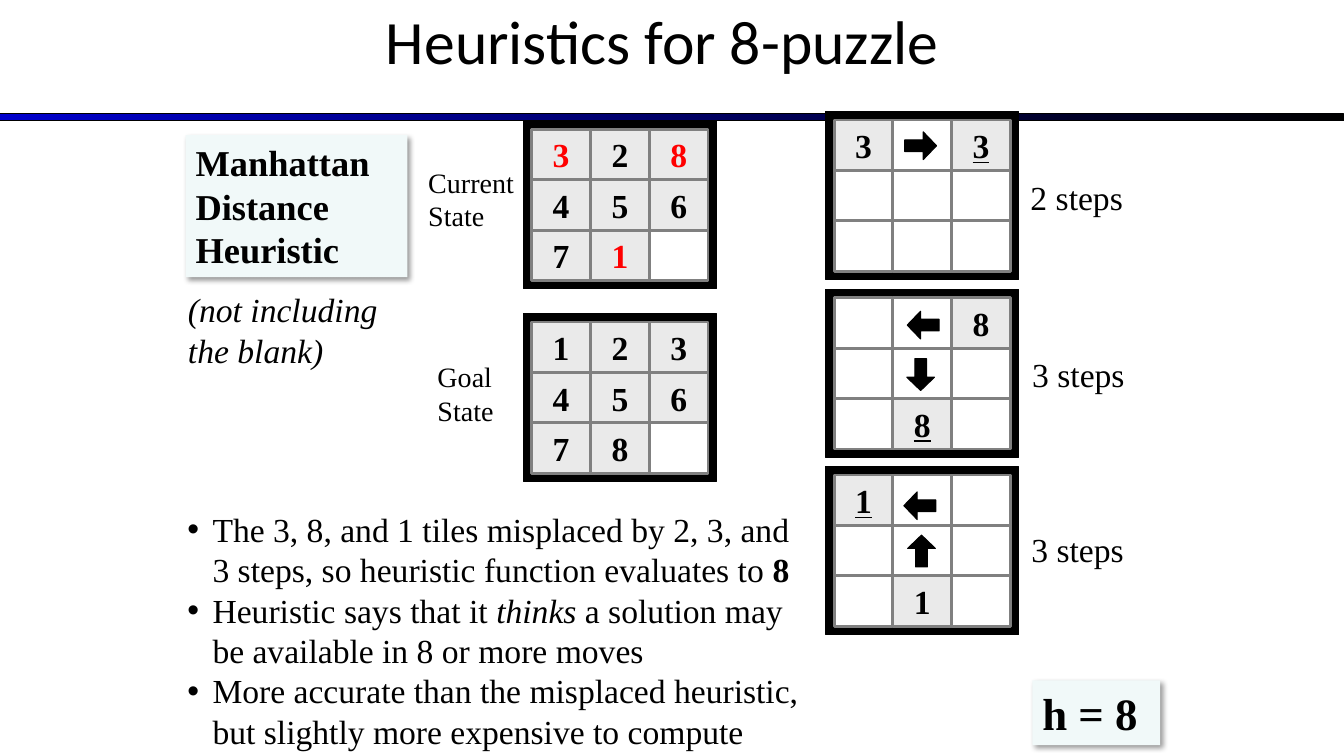
from dataclasses import dataclass

import lxml.etree
import pptx
import pptx.dml.color
import pptx.enum.shapes
import pptx.enum.text
import pptx.oxml
import pptx.oxml.ns
import pptx.util

WIDTH, HEIGHT = pptx.util.Inches(13.33), pptx.util.Inches(7.5)
COLUMNS, ROWS = 160, 90
CELL_COLUMNS, CELL_ROWS, FRAME = 7, 6, 1
SERIF = "Times New Roman"
BLACK, RED, WHITE = "000000", "FF0000", "FFFFFF"
TILE, GRID_LINE, PANEL = "EAEAEA", "808080", "F1F9F9"
RECTANGLE = pptx.enum.shapes.MSO_SHAPE.RECTANGLE
RIGHT_ARROW = pptx.enum.shapes.MSO_SHAPE.RIGHT_ARROW
RIGHT, DOWN, LEFT, UP = 0, 90, 180, 270


@dataclass
class Area:
    """A rectangle measured in columns and rows of the slide grid."""
    column: float
    row: float
    columns: float
    rows: float

    def lengths(self) -> tuple[int, int, int, int]:
        across, down = WIDTH / COLUMNS, HEIGHT / ROWS
        return (round(self.column * across), round(self.row * down),
                round(self.columns * across), round(self.rows * down))


@dataclass
class Run:
    text: str
    bold: bool = False
    italic: bool = False
    underline: bool = False
    color: str = BLACK


@dataclass
class Board:
    """Three strings of tiles; a dot is an empty cell."""
    column: float
    row: float
    tiles: tuple[str, str, str]
    red: str = ""
    goal: tuple[int, int] | None = None


@dataclass
class Arrow:
    """An arrow given by its centre on the slide grid."""
    column: float
    row: float
    rotation: int


@dataclass
class Label:
    area: Area
    paragraphs: list[list[Run]]
    size: int
    wrap: bool = True
    panel: bool = False


BOARDS = [
    Board(62.3, 14.4, ("328", "456", "71."), red="381"),
    Board(62.3, 37.35, ("123", "456", "78.")),
    Board(98.3, 13.3, ("3.3", "...", "..."), goal=(0, 2)),
    Board(98.3, 34.45, ("..8", "...", ".8."), goal=(2, 1)),
    Board(98.3, 55.55, ("1..", "...", ".1."), goal=(0, 0)),
]
ARROWS = [
    Arrow(109.6, 17.35, RIGHT),
    Arrow(109.7, 65.6, UP),
    Arrow(109.5, 60.2, LEFT),
    Arrow(109.6, 44.6, DOWN),
    Arrow(109.9, 38.7, LEFT),
]
LABELS = [
    Label(Area(22.1, 16.1, 26.4, 16.9),
          [[Run("Manhattan Distance", bold=True)], [Run("Heuristic", bold=True)]],
          26, panel=True),
    Label(Area(50.9, 42.25, 13.9, 9.25), [[Run("Goal State")]], 20),
    Label(Area(49.8, 19.1, 15.6, 9.25), [[Run("Current State")]], 20),
    Label(Area(121.5, 20.5, 13.6, 6), [[Run("2 steps")]], 24, wrap=False),
    Label(Area(121.7, 41.6, 13.6, 6), [[Run("3 steps")]], 24, wrap=False),
    Label(Area(121.6, 62.4, 13.6, 6), [[Run("3 steps")]], 24, wrap=False),
    Label(Area(122.9, 81, 15.2, 7.7), [[Run("h = 8", bold=True)]], 32,
          wrap=False, panel=True),
    Label(Area(21.2, 33.85, 28.1, 10.9),
          [[Run("(not including the blank)", italic=True)]], 24),
]
BULLETS = [
    [Run("The 3, 8, and 1 tiles misplaced by 2, 3, and 3 steps, "
         "so heuristic function evaluates to "), Run("8", bold=True)],
    [Run("Heuristic says that it "), Run("thinks", italic=True),
     Run(" a solution may be available in 8 or more moves")],
    [Run("More accurate than the misplaced heuristic, "
         "but slightly more expensive to compute")],
]


def rgb(color: str) -> pptx.dml.color.RGBColor:
    return pptx.dml.color.RGBColor.from_string(color)


def place(shape, area: Area) -> None:
    shape.left, shape.top, shape.width, shape.height = area.lengths()


def write(frame, paragraphs: list[list[Run]], size: int, font: str = SERIF,
          align=pptx.enum.text.PP_ALIGN.LEFT, wrap: bool = True,
          bulleted: bool = False) -> None:
    frame.auto_size = pptx.enum.text.MSO_AUTO_SIZE.NONE
    frame.word_wrap = wrap
    for index, runs in enumerate(paragraphs):
        paragraph = frame.add_paragraph() if index else frame.paragraphs[0]
        if bulleted:
            add_bullet(paragraph)
        paragraph.alignment = align
        paragraph.space_before = pptx.util.Pt(0)
        for item in runs:
            run = paragraph.add_run()
            run.text = item.text
            run.font.name, run.font.size = font, pptx.util.Pt(size)
            run.font.bold, run.font.italic = item.bold, item.italic
            run.font.underline = item.underline
            run.font.color.rgb = rgb(item.color)


def add_bullet(paragraph) -> None:
    properties = paragraph._p.get_or_add_pPr()
    indent = pptx.util.Inches(0.25)
    properties.set("marL", str(indent))
    properties.set("indent", str(-indent))
    bullet = lxml.etree.SubElement(properties, pptx.oxml.ns.qn("a:buChar"))
    bullet.set("char", "•")


def draw_shape(shapes, kind, area: Area, fill: str, line: str | None = BLACK,
               line_width: float = 0.75):
    shape = shapes.add_shape(kind, *area.lengths())
    shape.shadow.inherit = False
    shape.fill.solid()
    shape.fill.fore_color.rgb = rgb(fill)
    if line is None:
        shape.line.fill.background()
    else:
        shape.line.color.rgb = rgb(line)
        shape.line.width = pptx.util.Pt(line_width)
    return shape


def add_soft_shadow(shape) -> None:
    effects = shape._element.spPr.find(pptx.oxml.ns.qn("a:effectLst"))
    effects.append(pptx.oxml.parse_xml(
        f'<a:outerShdw {pptx.oxml.ns.nsdecls("a")} blurRad="50800" dist="38100" '
        'dir="2700000" algn="tl" rotWithShape="0"><a:srgbClr val="000000">'
        '<a:alpha val="40000"/></a:srgbClr></a:outerShdw>'))


def draw_board(slide, board: Board) -> None:
    shapes = slide.shapes.add_group_shape().shapes
    draw_shape(shapes, RECTANGLE, Area(board.column, board.row, 3 * CELL_COLUMNS + 2 * FRAME,
                                       3 * CELL_ROWS + 2 * FRAME), BLACK)
    for row, tiles in enumerate(board.tiles):
        for column, tile in enumerate(tiles):
            area = Area(board.column + FRAME + column * CELL_COLUMNS,
                        board.row + FRAME + row * CELL_ROWS, CELL_COLUMNS, CELL_ROWS)
            empty = tile == "."
            cell = draw_shape(shapes, RECTANGLE, area, WHITE if empty else TILE, GRID_LINE, 2)
            if not empty:
                run = Run(tile, bold=True, underline=board.goal == (row, column),
                          color=RED if tile in board.red else BLACK)
                write(cell.text_frame, [[run]], 24, align=pptx.enum.text.PP_ALIGN.CENTER)


def draw_arrow(slide, arrow: Arrow) -> None:
    columns, rows = 3.8, 3.3
    area = Area(arrow.column - columns / 2, arrow.row - rows / 2, columns, rows)
    shape = draw_shape(slide.shapes, RIGHT_ARROW, area, BLACK)
    shape.adjustments[0], shape.adjustments[1] = 0.42, 0.48
    shape.rotation = arrow.rotation


def draw_label(slide, label: Label) -> None:
    if label.panel:
        shape = draw_shape(slide.shapes, RECTANGLE, label.area, PANEL, None)
        add_soft_shadow(shape)
    else:
        shape = slide.shapes.add_textbox(*label.area.lengths())
    shape.text_frame.vertical_anchor = pptx.enum.text.MSO_ANCHOR.TOP
    write(shape.text_frame, label.paragraphs, label.size, wrap=label.wrap)


def draw_title_rule(slide) -> None:
    rule = draw_shape(slide.shapes, RECTANGLE, Area(0, 13.55, COLUMNS, 0.85), BLACK)
    rule.fill.gradient()
    rule.fill.gradient_angle = 0
    for stop, color in zip(rule.fill.gradient_stops, ("0000CC", BLACK)):
        stop.color.rgb = rgb(color)


def main() -> None:
    presentation = pptx.Presentation()
    presentation.slide_width, presentation.slide_height = WIDTH, HEIGHT
    slide = presentation.slides.add_slide(presentation.slide_layouts[1])
    title, body = slide.shapes.title, slide.placeholders[1]
    place(title, Area(28.7, -2.8, 102, 15))
    title.text_frame.vertical_anchor = pptx.enum.text.MSO_ANCHOR.MIDDLE
    write(title.text_frame, [[Run("Heuristics for 8-puzzle ")]], 44, "Calibri",
          pptx.enum.text.PP_ALIGN.CENTER)
    place(body, Area(21.1, 60, 76, 30))
    write(body.text_frame, BULLETS, 24, bulleted=True)
    draw_title_rule(slide)
    for board in BOARDS:
        draw_board(slide, board)
    for arrow in ARROWS:
        draw_arrow(slide, arrow)
    for label in LABELS:
        draw_label(slide, label)
    presentation.save("out.pptx")


if __name__ == "__main__":
    main()
